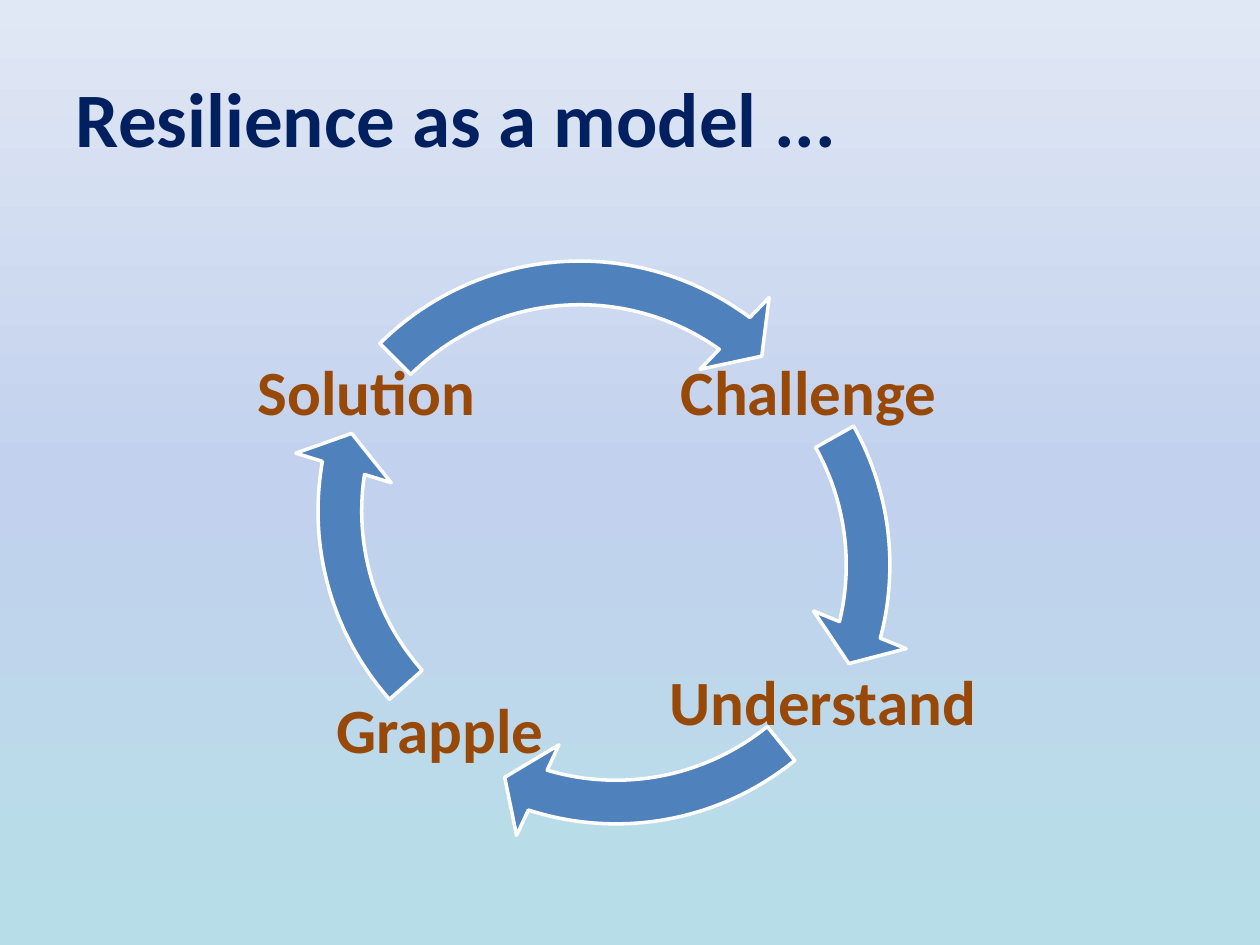
"""Build a slide that shows resilience as a cycle of four stages."""
from lxml import etree
from pptx import Presentation
from pptx.dml.color import RGBColor
from pptx.enum.shapes import MSO_SHAPE
from pptx.enum.text import MSO_ANCHOR, PP_ALIGN
from pptx.oxml.ns import qn
from pptx.util import Pt

PX = 914400 // 126
CIRCULAR_ARROW = MSO_SHAPE.CIRCULAR_ARROW
MIDDLE = MSO_ANCHOR.MIDDLE
LEFT, CENTER = PP_ALIGN.LEFT, PP_ALIGN.CENTER

NAVY, BROWN, BLUE, WHITE = "002060", "984807", "4F81BD", "FFFFFF"
BACKGROUND = [(0, "B7DEE8"), (50, "C2D1ED"), (100, "E1E8F5")]
TITLE = ("Resilience as a model ...", (63, 38, 1134, 158))

# stage, its label box, corner of the arrow that leaves it, end and start angle
STAGES = [
    ("Challenge", (660, 354, 297, 82), (294, 253), 14.34, 330.72),
    ("Understand", (651, 665, 344, 81), (304, 228), 107.36, 50.97),
    ("Grapple", (329, 687, 222, 93), (290, 199), 189.46, 138.44),
    ("Solution", (243, 357, 247, 77), (268, 233), 306.16, 225.22),
]
ARROW_SIZE = 624
ARROW_WIDTH, HEAD_ANGLE, HEAD_WIDTH = 0.07, 7.76, 0.08
ANGLE_UNIT = 0.6


def color(value):
    return RGBColor.from_string(value)


def emu(lengths):
    return [length * PX for length in lengths]


def paint_background(slide, stops):
    fill = slide.background.fill
    fill.gradient()
    fill.gradient_angle = 90
    stop_list = slide.element.find(".//" + qn("a:gsLst"))
    for old_stop in list(stop_list):
        stop_list.remove(old_stop)
    for percent, value in stops:
        stop = etree.SubElement(stop_list, qn("a:gs"), pos=str(percent * 1000))
        etree.SubElement(stop, qn("a:srgbClr"), val=value)


def add_text(slide, text, box, *, size, ink, align=LEFT, spacing=1.0, inset=(13, 6)):
    frame = slide.shapes.add_textbox(*emu(box)).text_frame
    frame.word_wrap = True
    frame.vertical_anchor = MIDDLE
    frame.margin_left = frame.margin_right = inset[0] * PX
    frame.margin_top = frame.margin_bottom = inset[1] * PX
    paragraph = frame.paragraphs[0]
    paragraph.alignment = align
    paragraph.line_spacing = spacing
    run = paragraph.add_run()
    run.text = text
    run.font.name = "Calibri"
    run.font.size = Pt(size)
    run.font.bold = True
    run.font.color.rgb = color(ink)


def add_arrow(slide, corner, end, start):
    arrow = slide.shapes.add_shape(
        CIRCULAR_ARROW, *emu((*corner, ARROW_SIZE, ARROW_SIZE)))
    angles = [angle * ANGLE_UNIT for angle in (HEAD_ANGLE, end, start)]
    for index, value in enumerate([ARROW_WIDTH, *angles, HEAD_WIDTH]):
        arrow.adjustments[index] = value
    arrow.shadow.inherit = False
    arrow.fill.solid()
    arrow.fill.fore_color.rgb = color(BLUE)
    arrow.line.color.rgb = color(WHITE)
    arrow.line.width = Pt(2)


def main():
    deck = Presentation()
    deck.slide_width, deck.slide_height = emu((1260, 945))
    slide = deck.slides.add_slide(deck.slide_layouts[6])
    paint_background(slide, BACKGROUND)
    add_text(slide, *TITLE, size=44, ink=NAVY)
    for stage, box, corner, end, start in STAGES:
        add_text(slide, stage, box, size=36, ink=BROWN, align=CENTER,
                 spacing=0.9, inset=(6, 6))
        add_arrow(slide, corner, end, start)
    deck.save("out.pptx")


if __name__ == "__main__":
    main()
